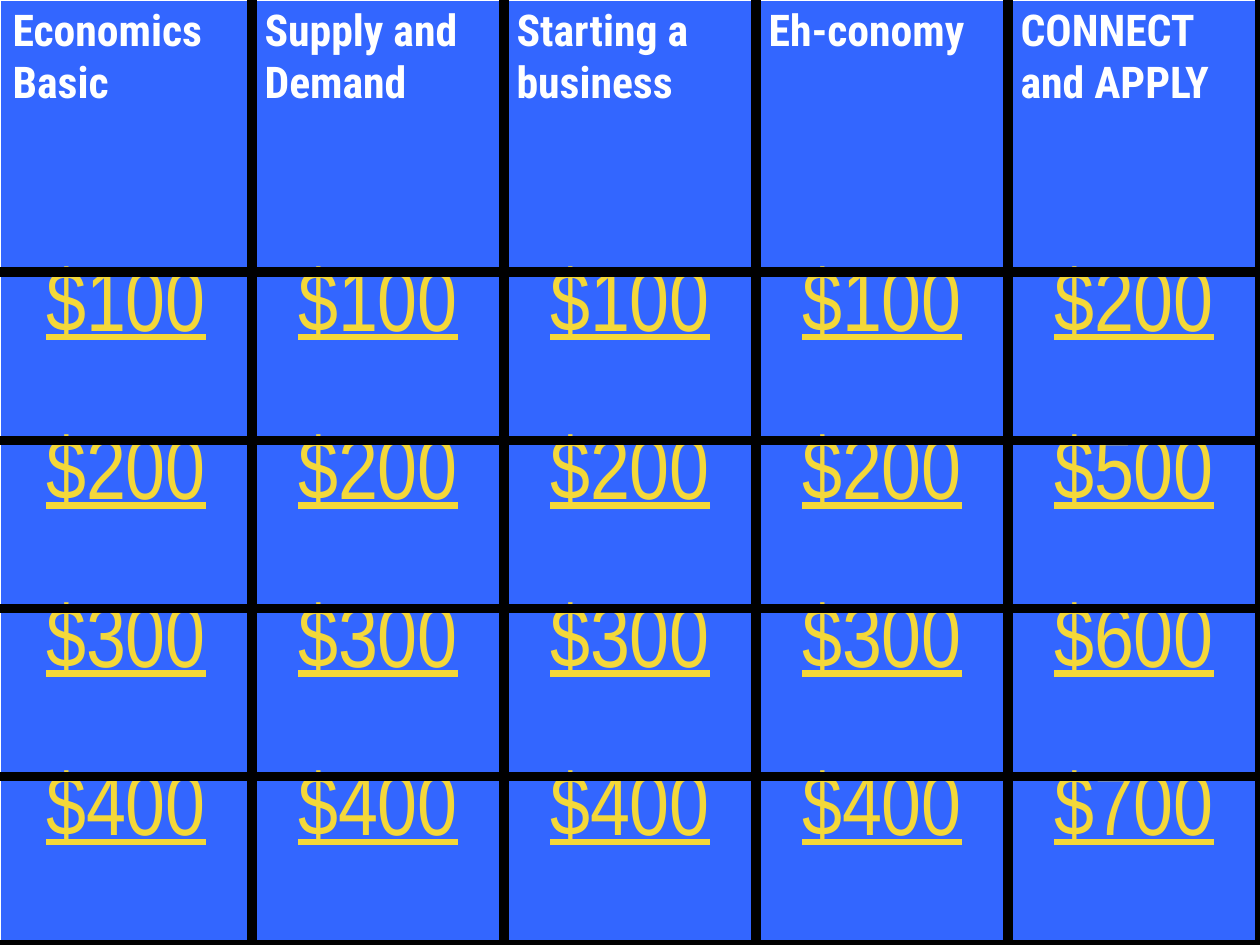
from lxml import etree
from pptx import Presentation
from pptx.dml.color import RGBColor
from pptx.enum import text
from pptx.oxml import ns
from pptx.util import Pt

TOPICS = ["Economics Basic", "Supply and Demand", "Starting a business",
          "Eh-conomy", "CONNECT and APPLY"]
PRICES = [(100, 200), (200, 500), (300, 600), (400, 700)]
ROWS = [TOPICS] + [[f"${usual}"] * 4 + [f"${last}"] for usual, last in PRICES]

WIDTH, HEIGHT = 720, 540
HEADER_HEIGHT = 155.5
PRICE_HEIGHT = (HEIGHT - HEADER_HEIGHT) / len(PRICES)
BLUE, WHITE, YELLOW, BLACK = "3366FF", "FFFFFF", "F4D839", "000000"
BORDER = 6


def color(value):
    return RGBColor.from_string(value)


def add_borders(cell, sides):
    properties = cell._tc.get_or_add_tcPr()
    for position, side in enumerate(sides):
        line = etree.Element(ns.qn(f"a:ln{side}"), w=str(Pt(BORDER)))
        fill = etree.SubElement(line, ns.qn("a:solidFill"))
        etree.SubElement(fill, ns.qn("a:srgbClr"), val=BLACK)
        properties.insert(position, line)


def style_topic(para):
    font = para.font
    font.name, font.size, font.bold = "Roboto Condensed", Pt(25), True
    font.color.rgb = color(WHITE)


def style_price(para):
    para.alignment = text.PP_ALIGN.CENTER
    para.line_spacing = 0.8
    font = para.font
    font.name, font.size, font.underline = "Arial Narrow", Pt(50), True
    font.bold = False
    font.color.rgb = color(YELLOW)


deck = Presentation()
deck.slide_width, deck.slide_height = Pt(WIDTH), Pt(HEIGHT)
page = deck.slides.add_slide(deck.slide_layouts[6])
board = page.shapes.add_table(len(ROWS), len(TOPICS), 0, 0,
                              Pt(WIDTH), Pt(HEIGHT)).table
board.horz_banding = False
board.first_row = False

for column in board.columns:
    column.width = Pt(WIDTH / len(TOPICS))

for r, labels in enumerate(ROWS):
    board.rows[r].height = Pt(PRICE_HEIGHT if r else HEADER_HEIGHT)
    for c, label in enumerate(labels):
        cell = board.cell(r, c)
        cell.text = label
        cell.fill.solid()
        cell.fill.fore_color.rgb = color(BLUE)
        sides = ("L" if c else "") + "R" + ("T" if r else "") + "B"
        add_borders(cell, sides)
        style = style_price if r else style_topic
        style(cell.text_frame.paragraphs[0])

deck.save("out.pptx")
